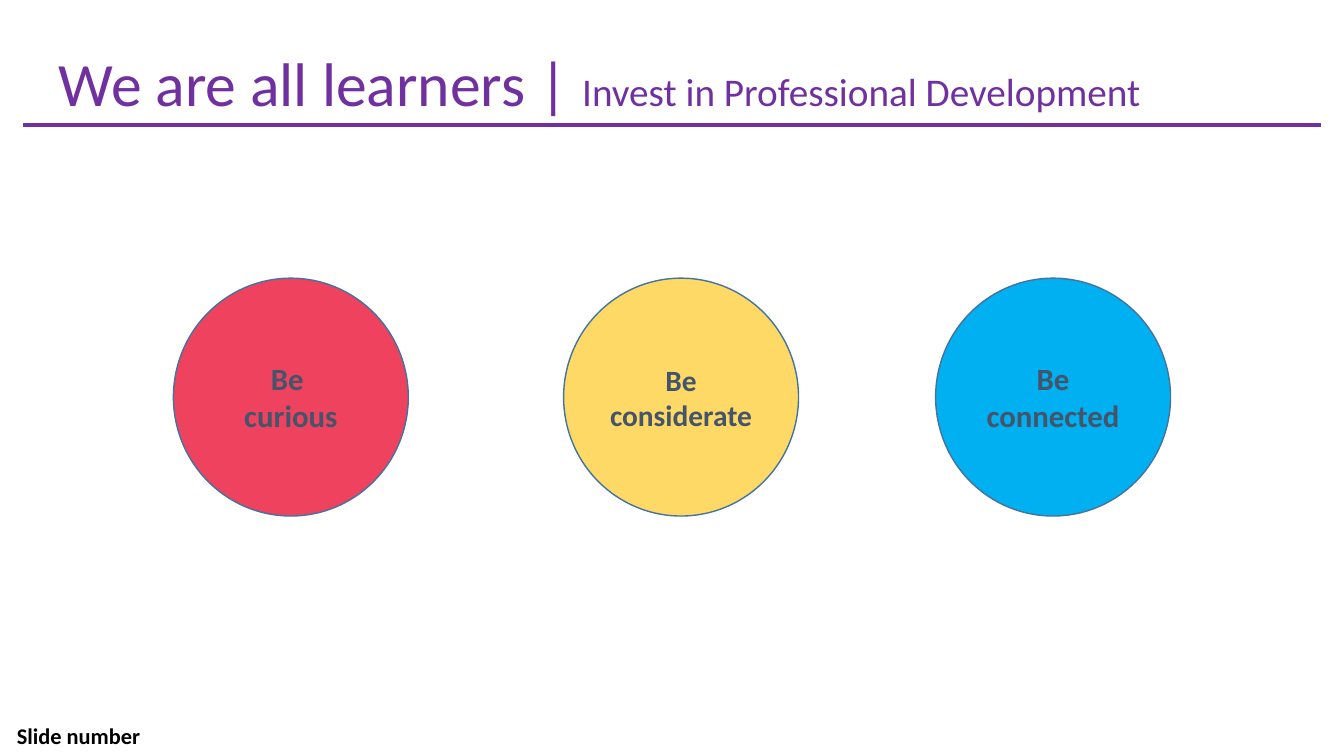
from dataclasses import dataclass

from lxml.etree import SubElement
from pptx import Presentation
from pptx.dml.color import RGBColor
from pptx.enum.shapes import MSO_CONNECTOR, MSO_SHAPE
from pptx.enum.text import MSO_ANCHOR, MSO_AUTO_SIZE, PP_ALIGN
from pptx.oxml.ns import qn
from pptx.util import Inches, Pt

TITLE = ("We are all learners | ", "Invest in Professional Development")
CIRCLES = [
    {"text": "Be \ncurious", "left": 1.72, "fill": "EE425F", "size": 22},
    {"text": "Be considerate", "left": 5.59, "fill": "FFD966", "size": 21},
    {"text": "Be connected", "left": 9.28, "fill": "00B0F0", "size": 22},
]
FOOTER = "Slide number"

SLIDE_WIDTH, SLIDE_HEIGHT = 13.33, 7.5
CIRCLE_TOP, CIRCLE_WIDTH, CIRCLE_HEIGHT = 2.76, 2.33, 2.36
TITLE_LEFT, TITLE_TOP, TITLE_WIDTH, TITLE_HEIGHT = 0.48, 0.4, 12.41, 0.84
RULE_LEFT = RULE_MARGIN = 0.23
FOOTER_LEFT, FOOTER_WIDTH, FOOTER_HEIGHT = 0.07, 3, 0.4


@dataclass(frozen=True)
class Theme:
    font: str = "Calibri"
    accent: str = "7030A0"
    outline: str = "43739E"
    circle_text: str = "44546A"
    footer_text: str = "000000"
    title_size: int = 44
    subtitle_size: int = 28
    footer_size: int = 16
    rule_width: int = 3
    outline_width: int = 1


THEME = Theme()


def format_run(run, size, color, bold=False):
    run.font.name = THEME.font
    run.font.size = Pt(size)
    run.font.bold = bold
    run.font.color.rgb = RGBColor.from_string(color)


def place(shape, left, top, width, height):
    shape.left, shape.top = Inches(left), Inches(top)
    shape.width, shape.height = Inches(width), Inches(height)


def add_circle(slide, circle):
    shape = slide.shapes.add_shape(
        MSO_SHAPE.OVAL, Inches(circle["left"]), Inches(CIRCLE_TOP),
        Inches(CIRCLE_WIDTH), Inches(CIRCLE_HEIGHT))
    shape.shadow.inherit = False
    shape.fill.solid()
    shape.fill.fore_color.rgb = RGBColor.from_string(circle["fill"])
    shape.line.color.rgb = RGBColor.from_string(THEME.outline)
    shape.line.width = Pt(THEME.outline_width)
    text_frame = shape.text_frame
    text_frame.text = circle["text"]
    text_frame.word_wrap = True
    text_frame.vertical_anchor = MSO_ANCHOR.MIDDLE
    for paragraph in text_frame.paragraphs:
        paragraph.alignment = PP_ALIGN.CENTER
        for run in paragraph.runs:
            format_run(run, circle["size"], THEME.circle_text, bold=True)


def add_footer(slide):
    shape = slide.shapes.add_textbox(
        Inches(FOOTER_LEFT), Inches(SLIDE_HEIGHT - FOOTER_HEIGHT),
        Inches(FOOTER_WIDTH), Inches(FOOTER_HEIGHT))
    text_frame = shape.text_frame
    text_frame.text = FOOTER
    text_frame.word_wrap = True
    text_frame.vertical_anchor = MSO_ANCHOR.MIDDLE
    format_run(text_frame.paragraphs[0].runs[0], THEME.footer_size, THEME.footer_text, bold=True)


def add_rule(slide):
    height = Inches(TITLE_TOP + TITLE_HEIGHT)
    rule = slide.shapes.add_connector(
        MSO_CONNECTOR.STRAIGHT, Inches(RULE_LEFT), height,
        Inches(SLIDE_WIDTH - RULE_MARGIN), height)
    rule.line.color.rgb = RGBColor.from_string(THEME.accent)
    rule.line.width = Pt(THEME.rule_width)
    SubElement(rule._element.spPr, qn("a:effectLst"))


def format_title(slide):
    title = slide.shapes.title
    place(title, TITLE_LEFT, TITLE_TOP, TITLE_WIDTH, TITLE_HEIGHT)
    text_frame = title.text_frame
    text_frame.word_wrap = True
    text_frame.auto_size = MSO_AUTO_SIZE.SHAPE_TO_FIT_TEXT
    text_frame.vertical_anchor = MSO_ANCHOR.TOP
    paragraph = text_frame.paragraphs[0]
    paragraph.alignment = PP_ALIGN.LEFT
    for text, size in zip(TITLE, (THEME.title_size, THEME.subtitle_size)):
        run = paragraph.add_run()
        run.text = text
        format_run(run, size, THEME.accent)


def main():
    presentation = Presentation()
    presentation.slide_width = Inches(SLIDE_WIDTH)
    presentation.slide_height = Inches(SLIDE_HEIGHT)
    slide = presentation.slides.add_slide(presentation.slide_layouts.get_by_name("Title Only"))
    for circle in CIRCLES:
        add_circle(slide, circle)
    add_footer(slide)
    add_rule(slide)
    format_title(slide)
    presentation.save("out.pptx")


if __name__ == "__main__":
    main()
